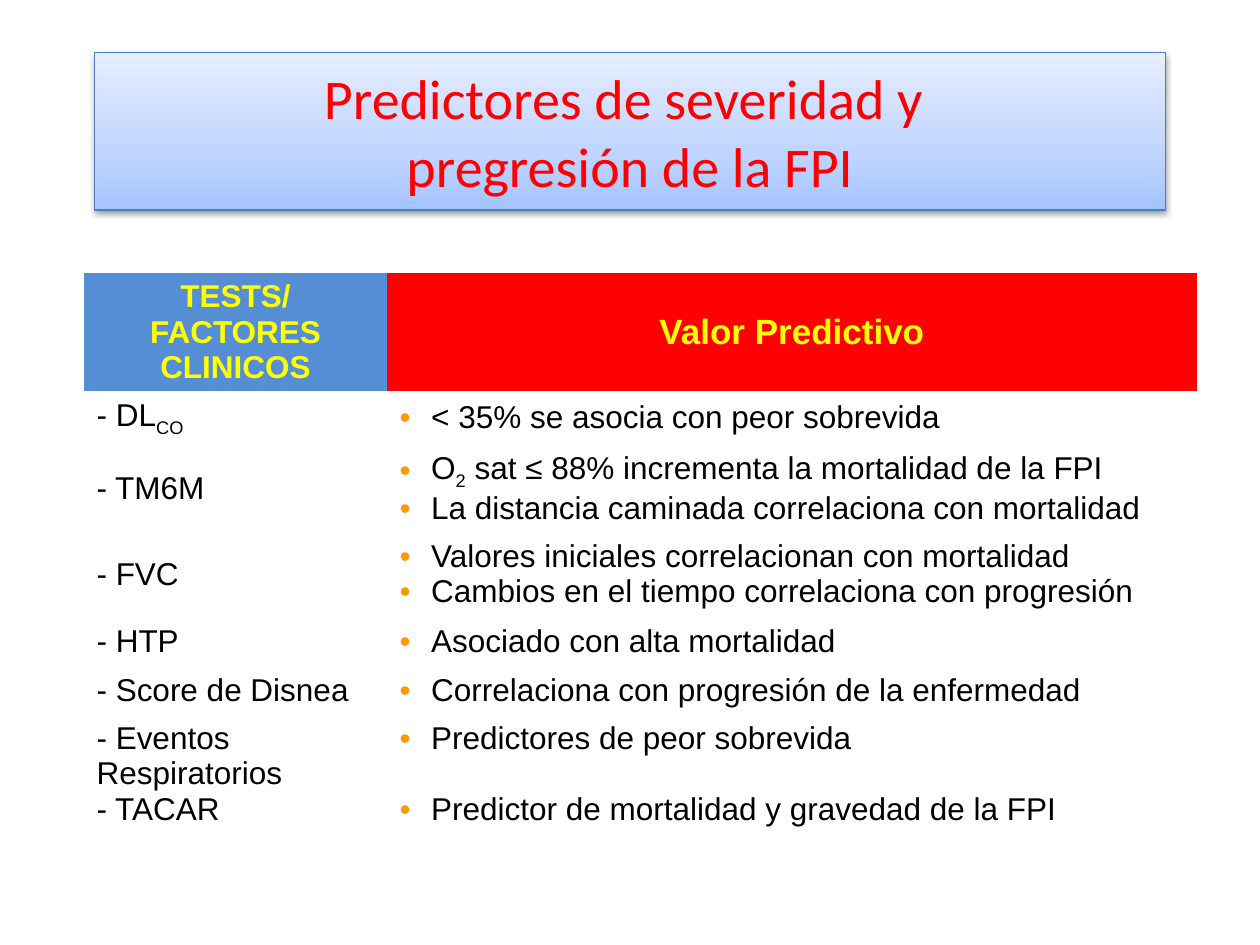
import copy

import pptx
import pptx.dml.color
import pptx.enum.text
import pptx.oxml
import pptx.oxml.ns
import pptx.util
from lxml import etree

Pt = pptx.util.Pt
RGB = pptx.dml.color.RGBColor.from_string
ALIGN = pptx.enum.text.PP_ALIGN
MIDDLE = pptx.enum.text.MSO_ANCHOR.MIDDLE
qn = pptx.oxml.ns.qn

COLORS = {
    "title": "FF0000", "title_line": "4B7EBC",
    "grad_low": "A4C4FF", "grad_mid": "BFD4FF", "grad_high": "E6EEFF",
    "tests_head": "558ED5", "value_head": "FF0000", "head_text": "FFFF00",
    "text": "000000", "bullet": "FF9900",
}


def add_run(paragraph, text, size, color, font="Arial", bold=False, subscript=False):
    run = paragraph.add_run()
    run.text = text
    run.font.size = Pt(size)
    run.font.name = font
    run.font.bold = bold
    run.font.color.rgb = RGB(COLORS[color])
    if subscript:
        run.font._element.set("baseline", "-25000")


def add_bullet(paragraph):
    properties = paragraph._p.get_or_add_pPr()
    properties.set("marL", str(Pt(18)))
    properties.set("indent", str(-Pt(18)))
    bullet_color = etree.SubElement(properties, qn("a:buClr"))
    etree.SubElement(bullet_color, qn("a:srgbClr"), val=COLORS["bullet"])
    etree.SubElement(properties, qn("a:buFont"), typeface="Arial")
    etree.SubElement(properties, qn("a:buChar"), char="•")


presentation = pptx.Presentation()
presentation.slide_width, presentation.slide_height = Pt(720), Pt(540)
slide = presentation.slides.add_slide(presentation.slide_layouts[5])

# Title banner
title = slide.shapes.title
title.left, title.top, title.width, title.height = Pt(54), Pt(30), Pt(612), Pt(90)
title.fill.gradient()
title.fill.gradient_angle = 90
banner = title._element.spPr
stop_list = banner.find(".//" + qn("a:gsLst"))
stop_list.insert(1, copy.deepcopy(stop_list[0]))
gradient = [(0, "grad_low"), (0.35, "grad_mid"), (1, "grad_high")]
for stop, (position, color) in zip(title.fill.gradient_stops, gradient):
    stop.position = position
    stop.color.rgb = RGB(COLORS[color])
title.line.color.rgb = RGB(COLORS["title_line"])
title.line.width = Pt(0.75)
title.shadow.inherit = False
shadow = etree.SubElement(
    banner.find(qn("a:effectLst")), qn("a:outerShdw"),
    blurRad=str(Pt(3.1)), dist=str(Pt(1.6)), dir="5400000", rotWithShape="0")
shadow_color = etree.SubElement(shadow, qn("a:srgbClr"), val="000000")
etree.SubElement(shadow_color, qn("a:alpha"), val="38000")

title.text_frame.vertical_anchor = MIDDLE
heading = title.text_frame.paragraphs[0]
heading.alignment = ALIGN.CENTER
add_run(heading, "Predictores de severidad y ", 32, "title", "Calibri")
heading.add_line_break()
heading._p.findall(qn("a:br"))[-1].append(
    copy.deepcopy(heading.runs[0].font._element))
add_run(heading, "pregresión de la FPI", 32, "title", "Calibri")

# Predictors: each cell lists paragraphs, each paragraph its runs;
# a run starting with "_" is a subscript
predictors = [
    ([["- DL", "_CO"]], [["< 35% se asocia con peor sobrevida"]]),
    ([["- TM6M"]],
     [["O", "_2", " sat ≤ 88% incrementa la mortalidad de la FPI"],
      ["La distancia caminada correlaciona con mortalidad"]]),
    ([["- FVC"]],
     [["Valores iniciales correlacionan con mortalidad"],
      ["Cambios en el tiempo correlaciona con progresión"]]),
    ([["- HTP"]], [["Asociado con alta mortalidad"]]),
    ([["- Score de Disnea"]], [["Correlaciona con progresión de la enfermedad"]]),
    ([["- Eventos Respiratorios"], ["- TACAR"]],
     [["Predictores de peor sobrevida"],
      ["Predictor de mortalidad y gravedad de la FPI"]]),
]
row_heights = [67, 29.2, 47.5, 47.5, 29.2, 27, 66.5]
table = slide.shapes.add_table(
    len(row_heights), 2, Pt(48), Pt(156), Pt(636), Pt(sum(row_heights))).table
table.first_row = table.horz_banding = False
# "No style, no grid"
table._tbl.tblPr.find(qn("a:tableStyleId")).text = "{2D5ABB26-0587-4C30-8999-92F81FD0307C}"
for column, width in zip(table.columns, (173.2, 462.8)):
    column.width = Pt(width)
for row, height in zip(table.rows, row_heights):
    row.height = Pt(height)

headers = [("TESTS/ FACTORES CLINICOS", 18, "tests_head"),
           ("Valor Predictivo", 20, "value_head")]
for cell, (label, size, fill) in zip(table.rows[0].cells, headers):
    cell.vertical_anchor = MIDDLE
    cell.fill.solid()
    cell.fill.fore_color.rgb = RGB(COLORS[fill])
    cell.text_frame.paragraphs[0].alignment = ALIGN.CENTER
    add_run(cell.text_frame.paragraphs[0], label, size, "head_text", bold=True)

for row_number, predictor in enumerate(predictors, start=1):
    for column_number, lines in enumerate(predictor):
        cell = table.cell(row_number, column_number)
        cell.vertical_anchor = MIDDLE
        cell.fill.background()
        for line_number, pieces in enumerate(lines):
            frame = cell.text_frame
            paragraph = frame.add_paragraph() if line_number else frame.paragraphs[0]
            for piece in pieces:
                add_run(paragraph, piece.lstrip("_"), 18, "text",
                        subscript=piece.startswith("_"))
            if column_number == 1:
                add_bullet(paragraph)

# The wrapped label on the left takes two lines, so TACAR's value moves down one
tacar_value = table.cell(len(predictors), 1).text_frame.paragraphs[1]
tacar_value.space_before = Pt(20)

presentation.save("out.pptx")
